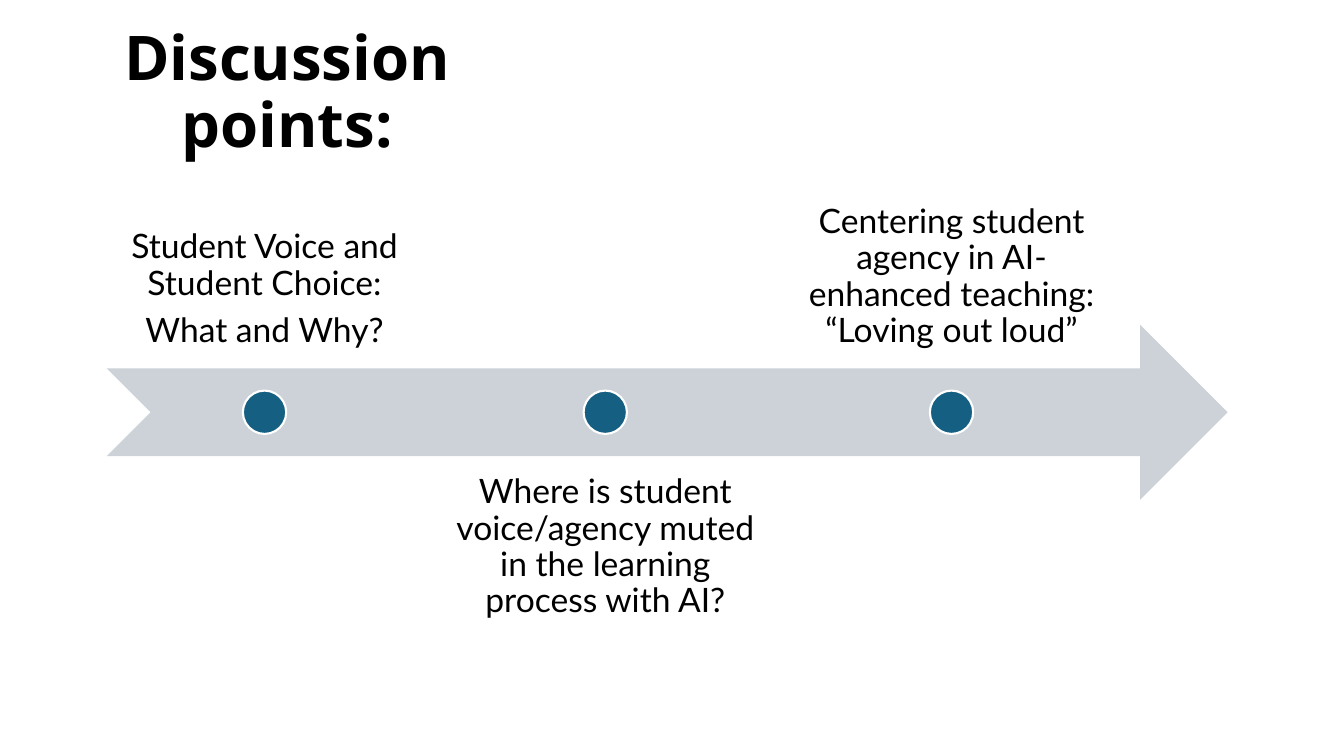
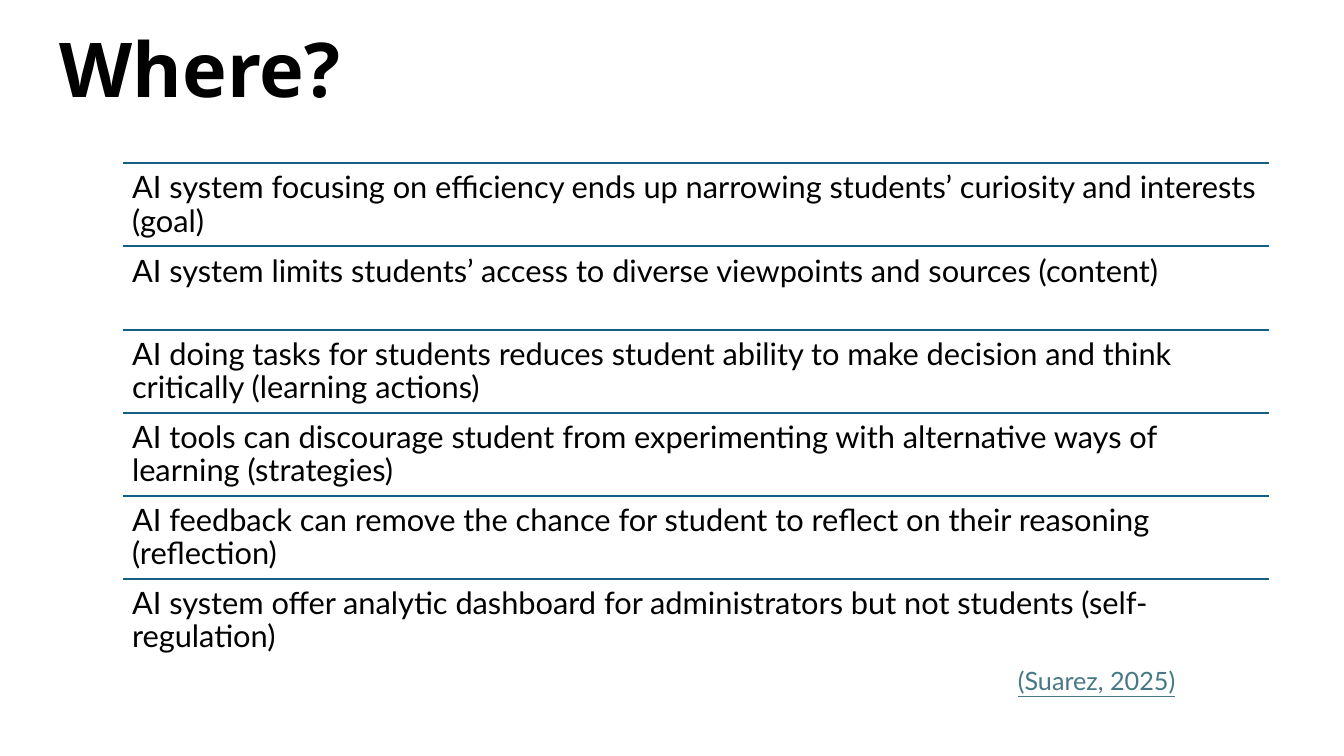
from lxml import etree
from pptx import Presentation, util as u
from pptx.dml.color import RGBColor
from pptx.enum import shapes, text
from pptx.oxml.ns import qn

PX = 9144  # EMU per px, 100 px to the inch
BLACK = RGBColor(0x00, 0x00, 0x00)
WHITE = RGBColor(0xFF, 0xFF, 0xFF)
BLUE = RGBColor(0x15, 0x60, 0x82)
GREY = RGBColor(0xCC, 0xD2, 0xD8)
LINK = RGBColor(0x46, 0x78, 0x86)
TITLE_FONT, BODY_FONT = "Noto Sans", "Lato"
TOP, MIDDLE, BOTTOM = (text.MSO_ANCHOR.TOP, text.MSO_ANCHOR.MIDDLE,
                       text.MSO_ANCHOR.BOTTOM)
LEFT, CENTER = text.PP_ALIGN.LEFT, text.PP_ALIGN.CENTER


def px(*lengths):
    return [u.Emu(round(length * PX)) for length in lengths]


def set_all(target, values):
    for name, value in values.items():
        setattr(target, name, value)


class Deck:
    """Holds the shared style and the current slide."""

    def __init__(self):
        self.presentation = Presentation()
        width, height = u.Emu(12192000), u.Emu(6858000)
        set_all(self.presentation, {"slide_width": width, "slide_height": height})
        self.slide = None

    def new_slide(self, title, box, size):
        self.slide = self.presentation.slides.add_slide(
            self.presentation.slide_layouts[5])
        shape = self.slide.shapes.title
        set_all(shape, dict(zip(("left", "top", "width", "height"), px(*box))))
        self.fill_text(shape, [title], size, font=TITLE_FONT, bold=True,
                       anchor=MIDDLE, align=CENTER)

    def fill_text(self, shape, lines, size, font=BODY_FONT, color=BLACK,
                  bold=False, underline=False, anchor=TOP, align=LEFT,
                  inset=None, spacing=0.9):
        frame = shape.text_frame
        set_all(frame, {"word_wrap": True, "auto_size": text.MSO_AUTO_SIZE.NONE,
                        "vertical_anchor": anchor})
        if inset is not None:
            sides = ("left", "right", "top", "bottom")
            set_all(frame, {f"margin_{side}": px(inset)[0] for side in sides})
        frame.text = "\n".join(lines)
        for paragraph in frame.paragraphs:
            set_all(paragraph, {"alignment": align, "line_spacing": spacing,
                                "space_before": u.Pt(0)})
            set_all(paragraph.font, {"name": font, "size": u.Pt(size),
                                     "bold": bold, "underline": underline})
            paragraph.font.color.rgb = color
        for paragraph in frame.paragraphs[:-1]:
            paragraph.space_after = u.Pt(8)

    def text(self, box, lines, size, **style):
        shape = self.slide.shapes.add_textbox(*px(*box))
        self.fill_text(shape, lines, size, **style)

    def shape(self, kind, box, fill, outline=None):
        shape = self.slide.shapes.add_shape(kind, *px(*box))
        shape.shadow.inherit = False
        shape.fill.solid()
        shape.fill.fore_color.rgb = fill
        if outline is None:
            shape.line.fill.background()
        else:
            shape.line.color.rgb = outline
            shape.line.width = u.Pt(1.5)

    def rule(self, left, top, width):
        line = self.slide.shapes.add_connector(
            shapes.MSO_CONNECTOR.STRAIGHT, *px(left, top, left + width, top))
        line.line.color.rgb = BLUE
        line.line.width = u.Pt(1.5)
        etree.SubElement(line._element.spPr, qn("a:effectLst"))


def discussion_slide(deck):
    deck.new_slide("Discussion points:", (22, 20, 526, 147), 44)

    # Timeline arrow
    arrow_top, arrow_height = 322, 174
    deck.shape(shapes.MSO_SHAPE.NOTCHED_RIGHT_ARROW,
               (106, arrow_top, 1112, arrow_height), GREY)

    # Points, alternately above and below the arrow
    above, below = (192, BOTTOM), (452, TOP)
    dot = 43
    dot_top = arrow_top + (arrow_height - dot) / 2
    points = [
        (106, 313, above, ["Student Voice and Student Choice:", "What and Why?"]),
        (431, 339, below, ["Where is student voice/agency muted in the "
                           "learning process with AI?"]),
        (782, 324, above, ["Centering student agency in AI-enhanced teaching: "
                           "“Loving out loud”"]),
    ]
    for left, width, (top, anchor), lines in points:
        deck.text((left, top, width, arrow_height), lines, 24,
                  anchor=anchor, align=CENTER, inset=19)
        deck.shape(shapes.MSO_SHAPE.OVAL,
                   (left + (width - dot) / 2, dot_top, dot, dot), BLUE, WHITE)


def where_slide(deck):
    deck.new_slide("Where?", (0, 0, 397, 145), 54)

    # Ruled list
    left, first_top, width, row_bottom = 122, 162, 1137, 657
    rows = [
        "AI system focusing on efficiency ends up narrowing students’ "
        "curiosity and interests (goal)",
        "AI system limits students’ access to diverse viewpoints and "
        "sources (content)",
        "AI doing tasks for students reduces student ability to make decision "
        "and think critically (learning actions)",
        "AI tools can discourage student from experimenting with alternative "
        "ways of learning (strategies)",
        "AI feedback can remove the chance for student to reflect on their "
        "reasoning (reflection)",
        "AI system offer analytic dashboard for administrators but not "
        "students (self-regulation)",
    ]
    row_height = (row_bottom - first_top) / len(rows)
    for index, row in enumerate(rows):
        top = first_top + index * row_height
        deck.rule(left, top, width)
        deck.text((left, top, width, row_height), [row], 22, inset=9)

    # Citation
    deck.text((1000, 655, 300, 40), ["(Suarez, 2025)"], 18, color=LINK,
              underline=True, spacing=1.0)


def main():
    deck = Deck()
    discussion_slide(deck)
    where_slide(deck)
    deck.presentation.save("out.pptx")


if __name__ == "__main__":
    main()
